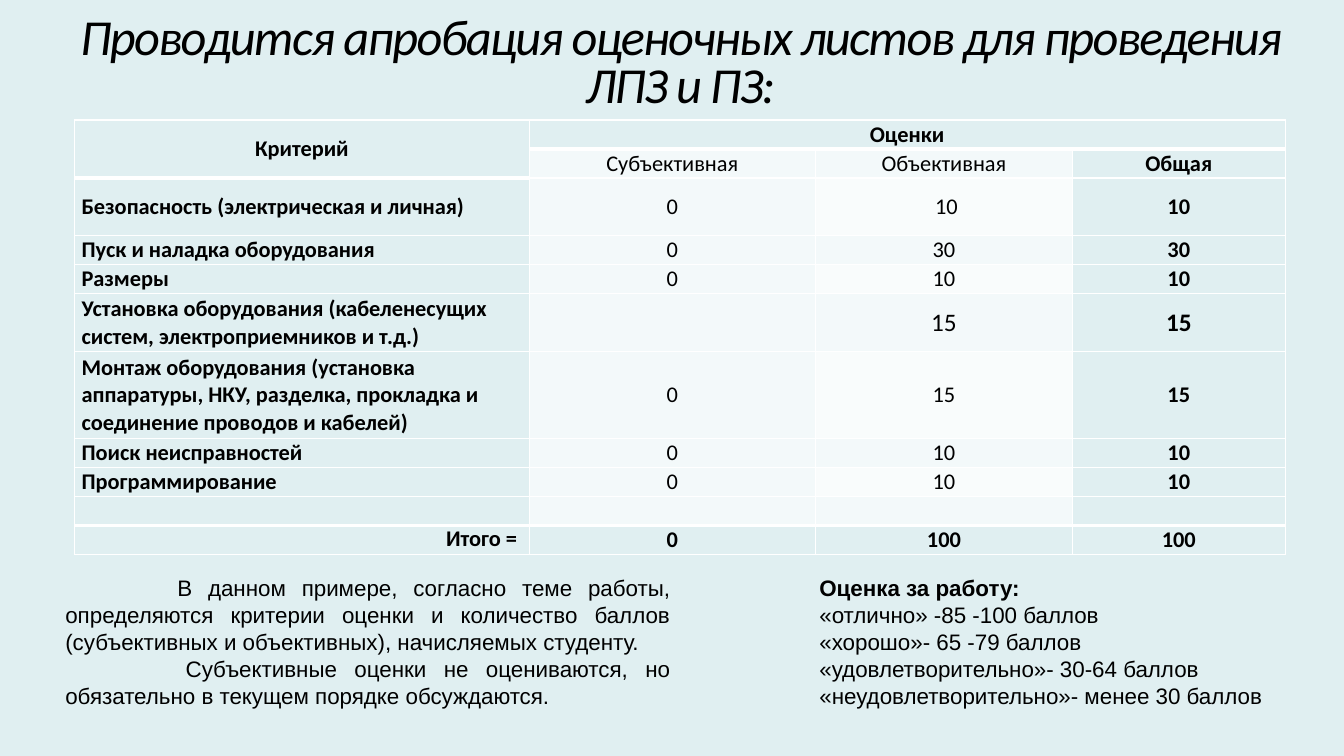
from lxml import etree
from pptx import Presentation
from pptx import util as u
from pptx.dml import color
from pptx.enum import text as t
from pptx.oxml import ns

PALE, LIGHT, LIGHTEST = "E0EFF1", "F3F9FA", "F9FCFC"
WHITE, BLACK = "FFFFFF", "000000"
LEFT, CENTER, RIGHT, JUSTIFY = (t.PP_ALIGN.LEFT, t.PP_ALIGN.CENTER,
                                t.PP_ALIGN.RIGHT, t.PP_ALIGN.JUSTIFY)
TITLE = "Проводится апробация оценочных листов для проведения ЛПЗ и ПЗ:"
CRITERIA = [
    ("Критерий", "Оценки", "", ""),
    ("", "Субъективная", "Объективная", "Общая"),
    ("Безопасность (электрическая и личная)", "0", " 10", "10"),
    ("Пуск и наладка оборудования", "0", "30", "30"),
    ("Размеры", "0", "10", "10"),
    ("Установка оборудования (кабеленесущих систем, электроприемников и т.д.)",
     "", "15", "15"),
    ("Монтаж оборудования (установка аппаратуры, НКУ, разделка, прокладка "
     "и соединение проводов и кабелей)", "0", "15", "15"),
    ("Поиск неисправностей", "0", "10", "10"),
    ("Программирование", "0", "10", "10"),
    ("", "", "", ""),
    ("Итого = ", "0", "100", "100"),
]
ROW_LINES = [1, 1, 2, 1, 1, 2, 3, 1, 1, 1, 1]
COLUMN_WIDTHS = [324.7, 204.5, 183.6, 151.9]
LINE_HEIGHT = 20.7
TOTAL_ROW = len(CRITERIA) - 1
INSTALL_ROW = 5
EXPLANATION = [
    "В данном примере, согласно теме работы, определяются критерии оценки и "
    "количество баллов (субъективных и объективных), начисляемых студенту.",
    "Субъективные оценки не оцениваются, но обязательно в текущем порядке "
    "обсуждаются.",
]
GRADES = [
    "Оценка за работу:",
    "«отлично» -85 -100 баллов",
    "«хорошо»- 65 -79 баллов",
    "«удовлетворительно»- 30-64 баллов",
    "«неудовлетворительно»- менее 30 баллов",
]


def rgb(value):
    return color.RGBColor.from_string(value)


def apply(target, values):
    for key, value in values.items():
        setattr(target, key, value)


class Sheet:
    def __init__(self, slide):
        self.slide = slide
        self.body = {"name": "Arial", "size": u.Pt(16), "bold": False}
        self.grid = {"name": "Calibri", "size": u.Pt(16), "bold": False}
        self.heading = {"name": "Calibri", "size": u.Pt(36), "italic": True}

    def background(self, fill):
        self.slide.background.fill.solid()
        self.slide.background.fill.fore_color.rgb = rgb(fill)

    def phrase(self, paragraph, wording, font, align):
        paragraph.alignment = align
        run = paragraph.add_run()
        run.text = wording
        apply(run.font, font)
        run.font.color.rgb = rgb(BLACK)
        return run

    def frame(self, left, top, width, height):
        box = self.slide.shapes.add_textbox(*map(u.Pt, (left, top, width, height)))
        box.text_frame.word_wrap = True
        return box.text_frame

    def title(self, area, wording):
        frame = self.frame(*area)
        frame.vertical_anchor = t.MSO_ANCHOR.BOTTOM
        paragraph = frame.paragraphs[0]
        paragraph.line_spacing = 0.8
        run = self.phrase(paragraph, wording, self.heading, CENTER)
        run._r.get_or_add_rPr().set("spc", "-120")

    def note(self, area, lines, align=LEFT, indent=(), bold_first=False):
        frame = self.frame(*area)
        for index, line in enumerate(lines):
            paragraph = frame.paragraphs[0] if index == 0 else frame.add_paragraph()
            font = {**self.body, "bold": bold_first and index == 0}
            self.phrase(paragraph, line, font, align)
            if indent:
                paragraph._p.get_or_add_pPr().set("indent", str(u.Pt(indent[index])))

    def border(self, cell, top, bottom):
        sides = {"lnL": 1, "lnR": 1, "lnT": top, "lnB": bottom}
        properties = cell._tc.get_or_add_tcPr()
        for index, (side, width) in enumerate(sides.items()):
            line = etree.Element(ns.qn("a:" + side), w=str(u.Pt(width)))
            fill = etree.SubElement(line, ns.qn("a:solidFill"))
            etree.SubElement(fill, ns.qn("a:srgbClr"), val=WHITE)
            properties.insert(index, line)

    def cell(self, cell, wording, fill, font, align, anchor):
        apply(cell, {"margin_left": u.Pt(5), "margin_right": u.Pt(5),
                     "margin_top": 0, "margin_bottom": 0,
                     "vertical_anchor": anchor})
        cell.fill.solid()
        cell.fill.fore_color.rgb = rgb(fill)
        paragraph = cell.text_frame.paragraphs[0]
        if wording:
            self.phrase(paragraph, wording, font, align)
        else:
            etree.SubElement(paragraph._p, ns.qn("a:endParaRPr"), sz="1600")

    def score_table(self, left, top):
        size = sum(COLUMN_WIDTHS), LINE_HEIGHT * sum(ROW_LINES)
        table = self.slide.shapes.add_table(
            len(CRITERIA), len(COLUMN_WIDTHS),
            *map(u.Pt, (left, top, *size))).table
        apply(table, {"first_row": False, "horz_banding": False})
        for column, width in zip(table.columns, COLUMN_WIDTHS):
            column.width = u.Pt(width)
        for r, (row, lines) in enumerate(zip(CRITERIA, ROW_LINES)):
            table.rows[r].height = u.Pt(LINE_HEIGHT * lines)
            for c, wording in enumerate(row):
                strong = r in (0, TOTAL_ROW) or c in (0, 3)
                objective = c == 2 and r in (2, 4, 6, 8)
                fill = PALE if strong else LIGHTEST if objective else LIGHT
                large = r == INSTALL_ROW and c > 1
                font = {**self.grid, "bold": strong,
                        "size": u.Pt(18 if large else 16)}
                align = CENTER if c or r < 2 else RIGHT if r == TOTAL_ROW else LEFT
                anchor = (t.MSO_ANCHOR.TOP if r == TOTAL_ROW and c == 0
                          else t.MSO_ANCHOR.MIDDLE)
                self.cell(table.cell(r, c), wording, fill, font, align, anchor)
                self.border(table.cell(r, c), rule_width(r, c), rule_width(r + 1, c))
        table.cell(0, 0).merge(table.cell(1, 0))
        table.cell(0, 1).merge(table.cell(0, 3))


def rule_width(row, column):
    return 3 if row in (1, TOTAL_ROW) or (row, column) == (2, 0) else 1


def main():
    deck = Presentation()
    apply(deck, {"slide_width": u.Pt(960), "slide_height": u.Pt(540)})
    sheet = Sheet(deck.slides.add_slide(deck.slide_layouts[6]))
    sheet.background(PALE)
    sheet.title((39.6, 22.3, 892.8, 62), TITLE)
    sheet.score_table(53.3, 85.7)
    sheet.note((39.6, 406.8, 446.4, 104.4), EXPLANATION, JUSTIFY, indent=(80, 86))
    sheet.note((578.2, 406.8, 339.8, 104.4), GRADES, bold_first=True)
    deck.save("out.pptx")


if __name__ == "__main__":
    main()
